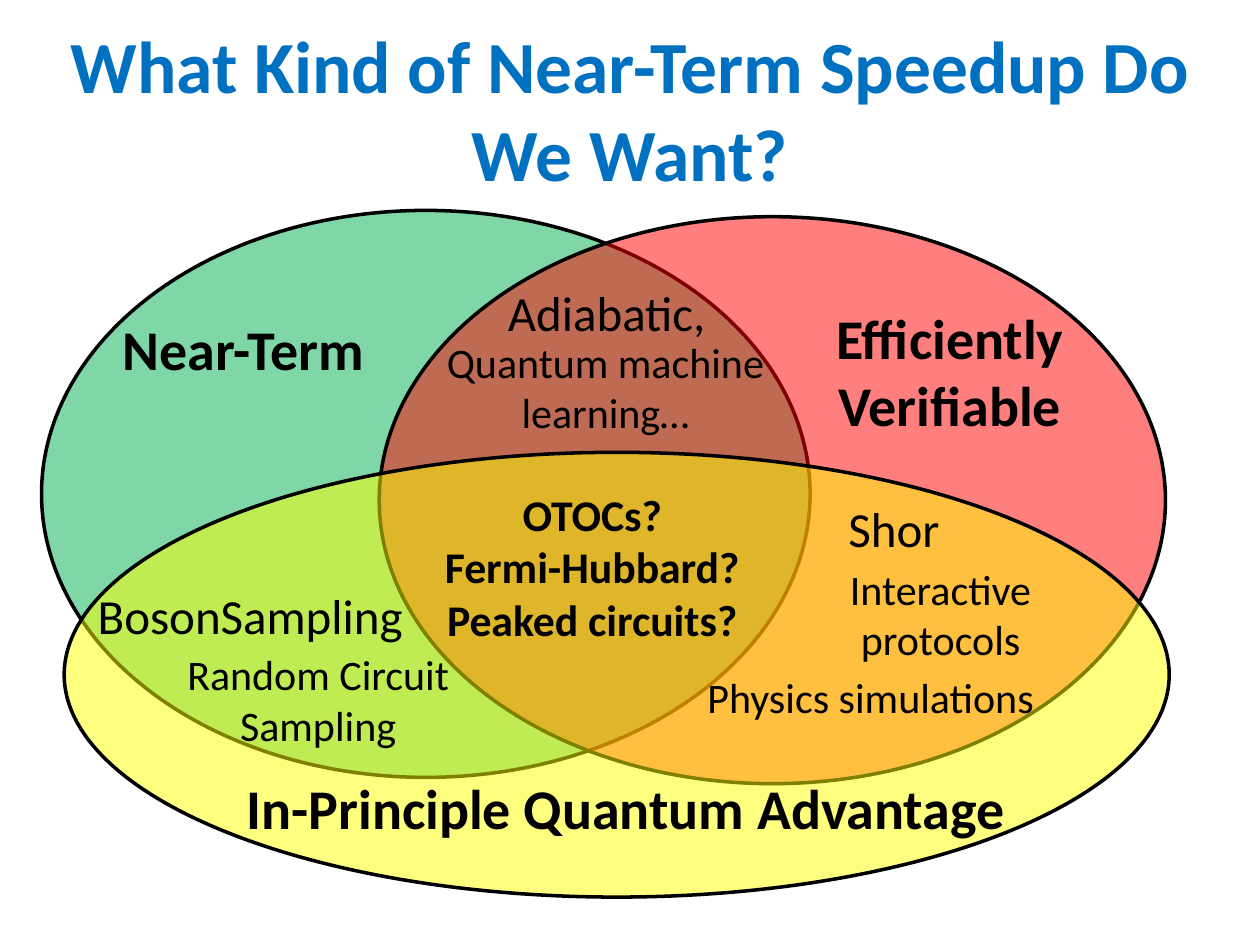
from lxml import etree
from pptx import Presentation
from pptx.dml.color import RGBColor
from pptx.enum.shapes import MSO_SHAPE
from pptx.enum.text import MSO_ANCHOR, PP_ALIGN
from pptx.oxml.ns import qn
from pptx.util import Inches, Pt

OVAL = MSO_SHAPE.OVAL
MIDDLE, TOP = MSO_ANCHOR.MIDDLE, MSO_ANCHOR.TOP
CENTER = PP_ALIGN.CENTER
FONT = "Calibri"
COLORS = {
    "title": "0070C0", "ink": "000000",
    "near": "00B050", "check": "FF0000", "gain": "FFFF00",
}

# Content: boxes are left, top, width, height in inches
TITLE = ("What Kind of Near-Term Speedup Do We Want?", (0.21, 0.39, 9.58, 0.93))
SETS = [
    ("near", (0.33, 1.67, 6.1, 4.5)),
    ("check", (3.01, 1.72, 6.24, 4.5)),
    ("gain", (0.51, 3.59, 8.77, 3.53)),
]
# Labels: text, size, bold, box; \v breaks a line, \n starts a paragraph
LABELS = [
    ("Near-Term", 32, True, (0.4, 2.45, 3.06, 0.64)),
    ("Efficiently\nVerifiable", 32, True, (6.44, 2.36, 2.2, 1.18)),
    ("In-Principle Quantum Advantage", 32, True, (1.85, 6.09, 6.24, 0.64)),
    ("Interactive protocols", 24, False, (6.46, 4.42, 2.01, 0.91)),
    ("Shor", 28, False, (6.09, 3.91, 2.01, 0.57)),
    ("Physics simulations", 24, False, (5.38, 5.28, 3.06, 0.51)),
    ("Adiabatic,", 28, False, (3.81, 2.19, 2.01, 0.57)),
    ("Quantum machine learning…", 24, False, (3.11, 2.62, 3.39, 0.91)),
    ("BosonSampling", 28, False, (0.59, 4.6, 2.79, 0.57)),
    ("Random Circuit Sampling", 24, False, (1.13, 5.1, 2.79, 0.91)),
    ("OTOCs?\vFermi-Hubbard?\nPeaked circuits?", 25, True,
     (2.91, 3.82, 3.58, 1.36)),
]


def color(name):
    return RGBColor.from_string(COLORS[name])


def add_oval(slide, name, box):
    oval = slide.shapes.add_shape(OVAL, *map(Inches, box))
    oval.shadow.inherit = False
    oval.fill.solid()
    oval.fill.fore_color.rgb = color(name)
    oval.line.color.rgb = color("ink")
    oval.line.width = Pt(2)
    # Half transparent fill, so the overlaps show
    tint = oval.element.spPr.find(qn("a:solidFill")).find(qn("a:srgbClr"))
    etree.SubElement(tint, qn("a:alpha")).set("val", "50000")


def add_text(slide, text, size, bold, box, ink="ink", anchor=TOP):
    frame = slide.shapes.add_textbox(*map(Inches, box)).text_frame
    frame.word_wrap = True
    frame.vertical_anchor = anchor
    frame.text = text
    for para in frame.paragraphs:
        para.alignment = CENTER
        for run in para.runs:
            run.font.name = FONT
            run.font.size = Pt(size)
            run.font.bold = bold
            run.font.color.rgb = color(ink)


def main():
    deck = Presentation()
    deck.slide_width, deck.slide_height = Inches(10), Inches(7.5)
    slide = deck.slides.add_slide(deck.slide_layouts[6])

    # Title
    text, box = TITLE
    add_text(slide, text, 42, True, box, "title", MIDDLE)

    # Overlapping sets, then their labels
    for name, box in SETS:
        add_oval(slide, name, box)
    for label in LABELS:
        add_text(slide, *label)

    deck.save("out.pptx")


if __name__ == "__main__":
    main()
